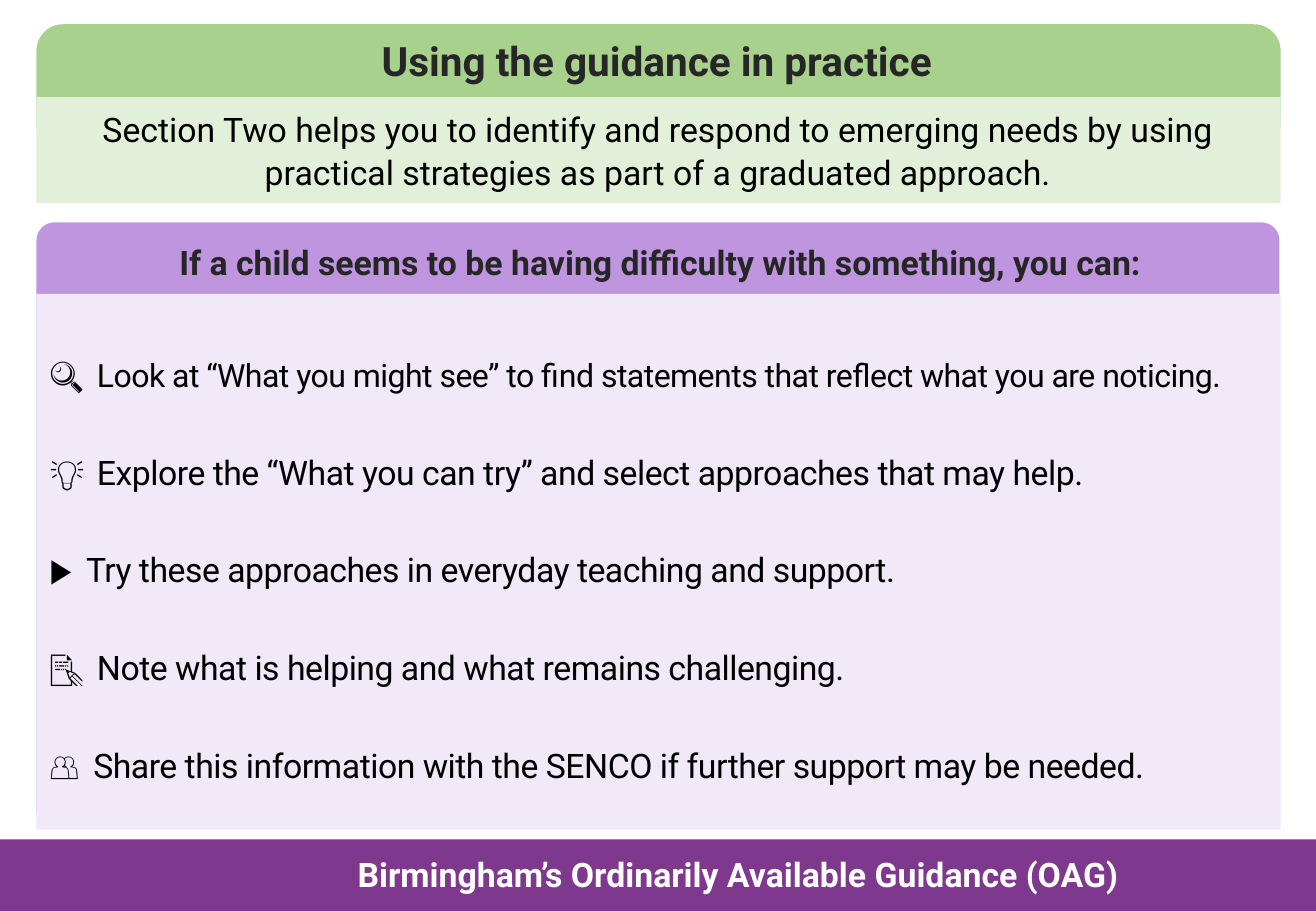
from pptx import Presentation
from pptx.dml.color import RGBColor
from pptx.enum import shapes, text
from pptx.oxml import parse_xml
from pptx.oxml.ns import nsdecls
from pptx.util import Inches, Pt

TITLE = "Using the guidance in practice"
INTRO = ("Section Two helps you to identify and respond to emerging needs "
         "by using practical strategies as part of a graduated approach.")
PROMPT = "If a child seems to be having difficulty with something, you can:"
FOOTER = "Birmingham’s Ordinarily Available Guidance (OAG)"
STEPS = [
    ("🔍", 0.39, 19, "Look at “What you might see” to find statements that reflect what you are noticing."),
    ("💡", 0.39, 20, "Explore the “What you can try” and select approaches that may help."),
    ("▶\ufe0f", 0.3, 20, "Try these approaches in everyday teaching and support."),
    ("📝", 0.39, 20, "Note what is helping and what remains challenging."),
    ("👥", 0.36, 20, "Share this information with the SENCO if further support may be needed."),
]
ROUND, RECT = shapes.MSO_SHAPE.ROUNDED_RECTANGLE, shapes.MSO_SHAPE.RECTANGLE
PANELS = [
    (ROUND, (0.3, 0.2, 10.24, 1.04), 0.211, "A9D18E"),
    (ROUND, (0.3, 0.8, 10.24, 0.87), 0, "E2F0D9"),
    (ROUND, (0.3, 1.83, 10.23, 4.99), 0.03, "BF95DF"),
    (ROUND, (0.3, 2.42, 10.24, 4.41), 0, "F1E8F8"),
    (RECT, (-0.04, 6.91, 10.92, 0.59), None, "7E398E"),
]


def rgb(value):
    return RGBColor.from_string(value)


def style(r, size, color="000000", bold=False, name="Roboto"):
    r.font.name, r.font.size, r.font.bold = name, Pt(size), bold
    r.font.color.rgb = rgb(color)


def add_panel(s, kind, box, radius, color):
    sp = s.shapes.add_shape(kind, *map(Inches, box))
    if radius is not None:
        sp.adjustments[0] = radius
    sp.fill.solid()
    sp.fill.fore_color.rgb = rgb(color)
    sp.line.fill.background()
    sp.shadow.inherit = False
    return sp


def add_box(s, box):
    sp = s.shapes.add_textbox(*map(Inches, box))
    sp.text_frame.word_wrap = True
    return sp


def set_line(sp, words, size, color, bold=True):
    tf = sp.text_frame
    tf.text = words
    p = tf.paragraphs[0]
    p.alignment = text.PP_ALIGN.CENTER
    style(p.runs[0], size, color, bold)
    return p


def add_steps(s):
    tf = add_box(s, (0.31, 2.5, 10.2, 3.96)).text_frame
    for i, (icon, stop, size, words) in enumerate(STEPS):
        p = tf.add_paragraph() if i else tf.paragraphs[0]
        p.line_spacing, p.space_after = Pt(50), Pt(8)
        p._p.get_or_add_pPr().append(parse_xml(
            f'<a:tabLst {nsdecls("a")}><a:tab pos="{Inches(stop)}" algn="l"/></a:tabLst>'))
        for part, name, points in ((icon + "\t", "Calibri", 20), (words, "Roboto", size)):
            r = p.add_run()
            r.text = part
            style(r, points, name=name)
            r._r.get_or_add_rPr().set("spc", "-30")


def main():
    prs = Presentation()
    prs.slide_width, prs.slide_height = Inches(10.83), Inches(7.5)
    s = prs.slides.add_slide(prs.slide_layouts[5])
    panels = [add_panel(s, *panel) for panel in PANELS]

    title = s.shapes.title
    panels[-1].element.addnext(title.element)
    title.left, title.top, title.width, title.height = map(Inches, (0.37, 0.25, 10.07, 0.5))
    title.text_frame.vertical_anchor = text.MSO_ANCHOR.MIDDLE
    title.text_frame.auto_size = text.MSO_AUTO_SIZE.SHAPE_TO_FIT_TEXT
    set_line(title, TITLE, 24, "262626")

    intro = add_box(s, (0.3, 0.79, 10.23, 0.87))
    tf = intro.text_frame
    tf.vertical_anchor = text.MSO_ANCHOR.MIDDLE
    tf.margin_left = tf.margin_right = Inches(0.06)
    tf.margin_top = tf.margin_bottom = Inches(0.03)
    set_line(intro, INTRO, 20, "000000", False).line_spacing = Pt(26)

    set_line(add_box(s, (0.35, 1.94, 10.17, 0.44)), PROMPT, 20, "262626")
    add_steps(s)
    set_line(add_box(s, (1.67, 6.98, 8.81, 0.44)), FOOTER, 20, "FFFFFF")
    prs.save("out.pptx")


if __name__ == "__main__":
    main()
